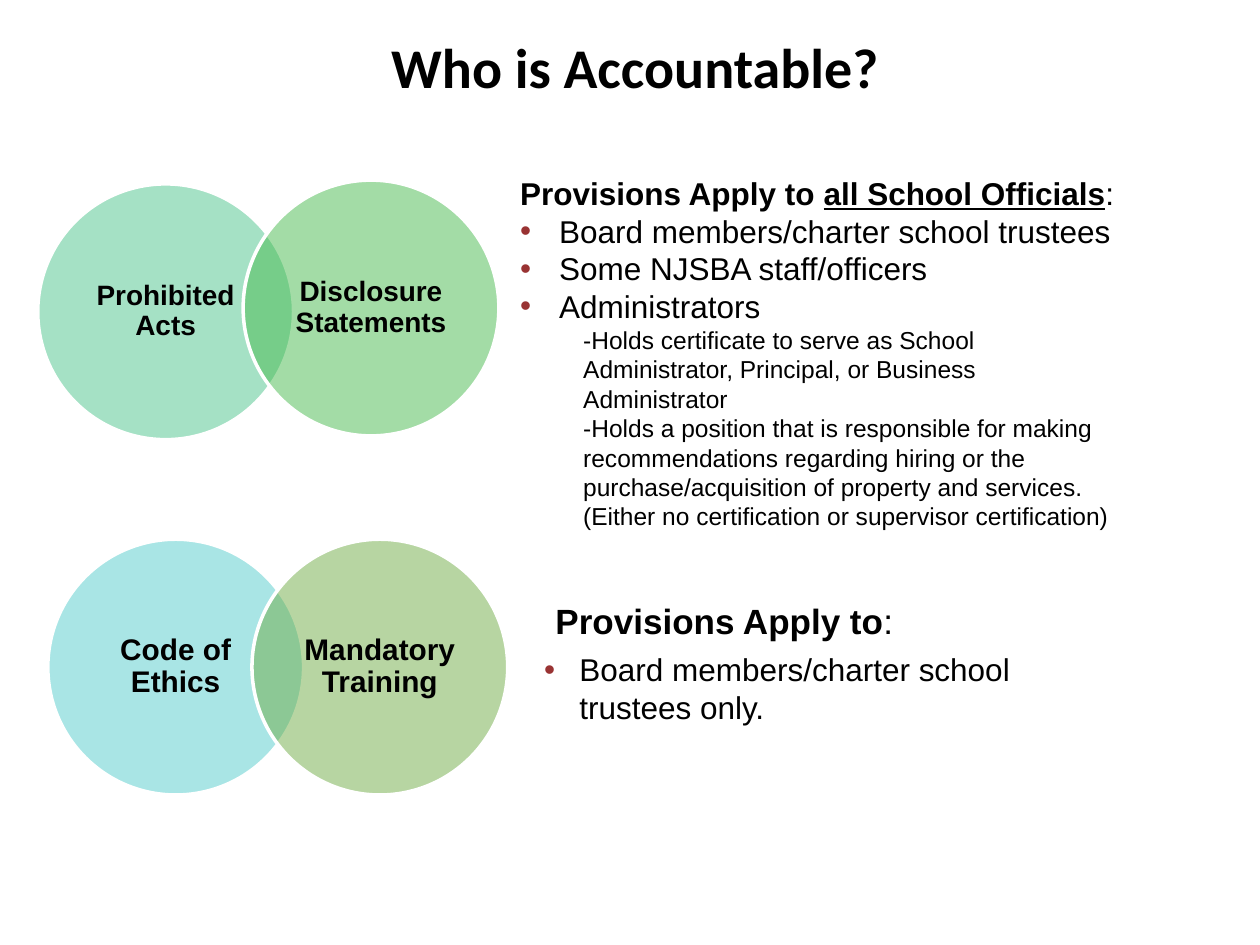
from lxml import etree
from pptx import Presentation
from pptx.dml.color import RGBColor
from pptx.enum.shapes import MSO_SHAPE
from pptx.enum.text import MSO_ANCHOR, PP_ALIGN
from pptx.oxml.ns import qn
from pptx.util import Inches, Pt

OVAL = MSO_SHAPE.OVAL
MIDDLE, TOP = MSO_ANCHOR.MIDDLE, MSO_ANCHOR.TOP
CENTER, LEFT = PP_ALIGN.CENTER, PP_ALIGN.LEFT

COLORS = {
    "text": "000000", "bullet": "993333", "outline": "FFFFFF",
    "prohibited": "4DC58D", "disclosure": "48BB4F",
    "ethics": "54CCCD", "training": "70AD47",
}
DIAMETER = 2.03


def write(frame, runs, size=18, font="Arial", bold=False, align=LEFT, anchor=TOP,
          indent=0, bullet=False, before=0, spacing=None):
    frame.word_wrap = True
    frame.vertical_anchor = anchor
    paragraph = frame.paragraphs[0] if not frame.text else frame.add_paragraph()
    paragraph.alignment = align
    paragraph.space_before = Pt(before)
    if spacing:
        paragraph.line_spacing = spacing
    properties = paragraph._p.get_or_add_pPr()
    properties.set("marL", str(Inches(indent)))
    properties.set("indent", str(Inches(-indent if bullet else 0)))
    if bullet:
        color = etree.SubElement(properties, qn("a:buClr"))
        etree.SubElement(color, qn("a:srgbClr"), val=COLORS["bullet"])
        etree.SubElement(properties, qn("a:buFont"), typeface="Arial")
        etree.SubElement(properties, qn("a:buChar"), char="•")
    paragraph.font.size = Pt(size)
    for text, run_bold, underline in [(runs, bold, False)] if isinstance(runs, str) else runs:
        run = paragraph.add_run()
        run.text = text
        run.font.name = font
        run.font.size = Pt(size)
        run.font.bold = run_bold
        run.font.underline = underline
        run.font.color.rgb = RGBColor.from_string(COLORS["text"])


presentation = Presentation()
presentation.slide_width, presentation.slide_height = Inches(10), Inches(7.5)
slide = presentation.slides.add_slide(presentation.slide_layouts[6])

title = slide.shapes.add_textbox(Inches(0.83), Inches(0.17), Inches(8.42), Inches(0.71))
write(title.text_frame, "Who is Accountable?", size=32, font="Calibri", bold=True,
      align=CENTER, anchor=MIDDLE)

venn_pairs = [
    (16, [("Prohibited Acts", "prohibited", 0.3, 1.46),
          ("Disclosure Statements", "disclosure", 1.93, 1.43)]),
    (17, [("Code of Ethics", "ethics", 0.38, 4.28),
          ("Mandatory Training", "training", 2, 4.28)]),
]
for size, topics in venn_pairs:
    venn = slide.shapes.add_group_shape()
    for label, color, left, top in topics:
        circle = venn.shapes.add_shape(OVAL, Inches(left), Inches(top),
                                       Inches(DIAMETER), Inches(DIAMETER))
        circle.shadow.inherit = False
        circle.fill.solid()
        circle.fill.fore_color.rgb = RGBColor.from_string(COLORS[color])
        fill_color = circle._element.spPr.find(qn("a:solidFill")).find(qn("a:srgbClr"))
        etree.SubElement(fill_color, qn("a:alpha"), val="50000")
        circle.line.color.rgb = RGBColor.from_string(COLORS["outline"])
        circle.line.width = Pt(2)
        frame = circle.text_frame
        frame.margin_left = frame.margin_right = Inches(0.1)
        frame.margin_top = frame.margin_bottom = Inches(0.02)
        write(frame, label, size=size, bold=True, align=CENTER, anchor=MIDDLE, spacing=0.9)

officials = slide.shapes.add_textbox(
    Inches(4.03), Inches(1.33), Inches(4.98), Inches(2.96)).text_frame
write(officials, [("Provisions Apply to ", True, False),
                  ("all School Officials", True, True), (":", False, False)])
for group in ["Board members/charter school trustees", "Some NJSBA staff/officers",
              "Administrators"]:
    write(officials, group, indent=0.31, bullet=True)
for criterion in [
    "-Holds certificate to serve as School Administrator, Principal, or Business Administrator",
    "-Holds a position that is responsible for making recommendations regarding hiring or the "
    "purchase/acquisition of property and services. "
    "(Either no certification or supervisor certification)",
]:
    write(officials, criterion, size=14, indent=0.5)

trustees = slide.shapes.add_textbox(
    Inches(4.22), Inches(4.71), Inches(4.08), Inches(1.47)).text_frame
write(trustees, [("Provisions Apply to", True, False), (":", False, False)],
      size=20, indent=0.09)
write(trustees, "Board members/charter school trustees only.", indent=0.28,
      bullet=True, before=5)

presentation.save("out.pptx")
